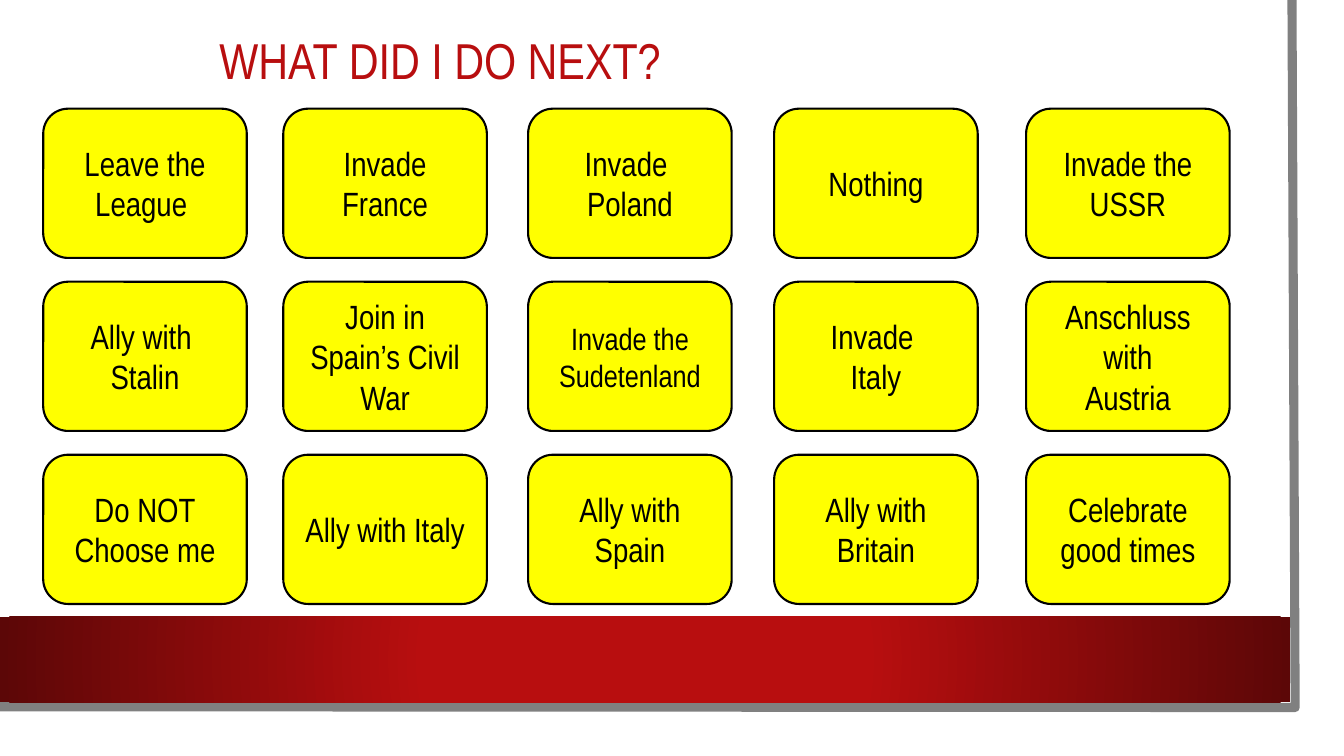
from dataclasses import dataclass

from lxml import etree
from pptx import Presentation
from pptx.dml.color import RGBColor
from pptx.enum.shapes import MSO_SHAPE
from pptx.enum.text import MSO_ANCHOR, PP_ALIGN
from pptx.oxml.ns import qn
from pptx.util import Cm, Pt

RECTANGLE = MSO_SHAPE.RECTANGLE
ROUNDED = MSO_SHAPE.ROUNDED_RECTANGLE
CENTER = PP_ALIGN.CENTER
MIDDLE = MSO_ANCHOR.MIDDLE


@dataclass(frozen=True)
class Theme:
    font: str = "Arial Narrow"
    red: RGBColor = RGBColor(0xB8, 0x0E, 0x0F)
    dark_red: RGBColor = RGBColor(0x5C, 0x07, 0x07)
    yellow: RGBColor = RGBColor(0xFF, 0xFF, 0x00)
    black: RGBColor = RGBColor(0, 0, 0)
    white: RGBColor = RGBColor(0xFF, 0xFF, 0xFF)
    grey: RGBColor = RGBColor(0x80, 0x80, 0x80)
    title_size: float = 36
    choice_size: float = 24
    small_size: float = 22


THEME = Theme()


@dataclass(frozen=True)
class Choice:
    text: str  # "\v" breaks a line, "\n" starts a paragraph
    size: float = THEME.choice_size


CHOICES = [
    [Choice("Leave the League "), Choice("Invade France"), Choice("Invade \vPoland"),
     Choice("Nothing"), Choice("Invade the\vUSSR")],
    [Choice("Ally with \vStalin"), Choice("Join in Spain’s Civil War"),
     Choice("Invade the\vSudetenland", THEME.small_size),
     Choice("Invade \vItaly"), Choice("Anschluss with\vAustria")],
    [Choice("Do NOT\nChoose me"), Choice("Ally with Italy"), Choice("Ally with\vSpain"),
     Choice("Ally with\vBritain"), Choice("Celebrate good times")],
]
COLUMN_LEFTS = (1.09, 7.14, 13.31, 19.51, 25.86)
FIRST_ROW_TOP, ROW_STEP = 2.74, 4.36
CHOICE_WIDTH, CHOICE_HEIGHT = 5.13, 3.76


def write_text(shape, text: str, *, size: float, color: RGBColor,
               line_spacing: float = 1.0) -> None:
    frame = shape.text_frame
    frame.word_wrap = True
    frame.vertical_anchor = MIDDLE
    frame.text = text
    for paragraph in frame.paragraphs:
        paragraph.alignment = CENTER
        paragraph.line_spacing = line_spacing
        for run in paragraph.runs:
            run.font.name = THEME.font
            run.font.size = Pt(size)
            run.font.color.rgb = color


def add_panel(slide, left: float, top: float, width: float, height: float, *,
              fill: RGBColor, kind=RECTANGLE):
    panel = slide.shapes.add_shape(kind, Cm(left), Cm(top), Cm(width), Cm(height))
    panel.shadow.inherit = False
    panel.fill.solid()
    panel.fill.fore_color.rgb = fill
    panel.line.fill.background()
    return panel


def add_page_edge(slide) -> None:
    builder = slide.shapes.build_freeform(Cm(32.56), Cm(0))
    builder.add_line_segments([(Cm(32.64), Cm(17.83)), (Cm(-0.08), Cm(17.81))], close=False)
    edge = builder.convert_to_shape()
    edge.shadow.inherit = False
    edge.fill.background()
    edge.line.color.rgb = THEME.grey
    edge.line.width = Pt(6.5)


def add_red_band(slide) -> None:
    band = add_panel(slide, 0, 15.54, 32.51, 2.16, fill=THEME.red)
    band.fill.gradient()
    stops = ((0.34, THEME.red), (1.0, THEME.dark_red))
    for stop, (position, color) in zip(band.fill.gradient_stops, stops):
        stop.position = position
        stop.color.rgb = color
    # Turn the linear gradient into a circular one
    gradient = band.element.spPr.find(qn("a:gradFill"))
    gradient.remove(gradient.find(qn("a:lin")))
    circle = etree.SubElement(gradient, qn("a:path"), {"path": "circle"})
    etree.SubElement(circle, qn("a:fillToRect"), dict.fromkeys("ltrb", "50000"))


def add_title(slide) -> None:
    title = slide.shapes.title
    title.left, title.top, title.width, title.height = Cm(-0.36), Cm(0), Cm(22.91), Cm(3.2)
    write_text(title, "WHAT DID I DO NEXT?", size=THEME.title_size,
               color=THEME.red, line_spacing=0.9)


def add_choice(slide, choice: Choice, left: float, top: float) -> None:
    card = add_panel(slide, left, top, CHOICE_WIDTH, CHOICE_HEIGHT,
                     fill=THEME.yellow, kind=ROUNDED)
    card.line.color.rgb = THEME.black
    card.line.width = Pt(1.5)
    write_text(card, choice.text, size=choice.size, color=THEME.black)


def main() -> None:
    deck = Presentation()
    deck.slide_width, deck.slide_height = Cm(33.87), Cm(19.05)
    slide = deck.slides.add_slide(deck.slide_layouts[5])

    # Page, its grey edge and the red band, all behind the title
    add_panel(slide, 0, 0, 33.27, 18.47, fill=THEME.white)
    add_page_edge(slide)
    add_red_band(slide)
    title_element = slide.shapes.title.element
    title_element.getparent().append(title_element)
    add_title(slide)

    # Grid of choices
    for row, choices in enumerate(CHOICES):
        for left, choice in zip(COLUMN_LEFTS, choices):
            add_choice(slide, choice, left, FIRST_ROW_TOP + row * ROW_STEP)

    deck.save("out.pptx")


if __name__ == "__main__":
    main()
